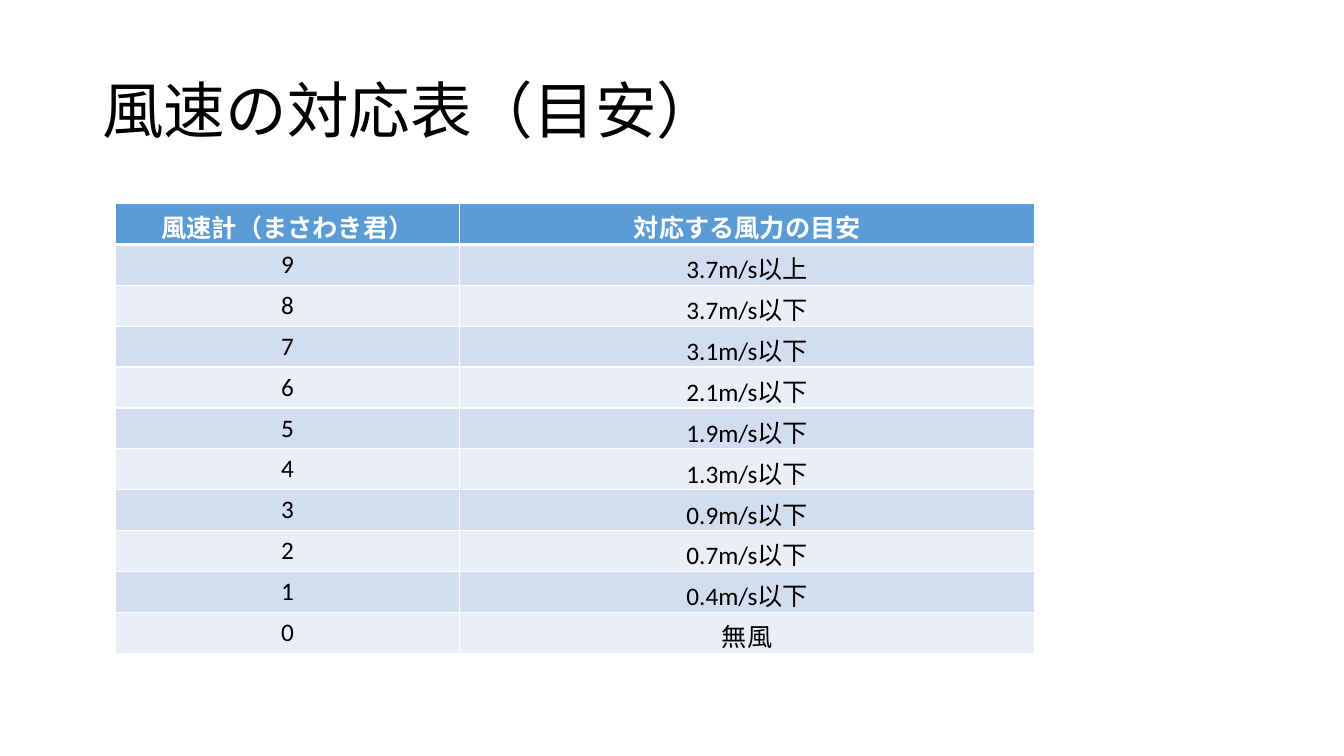
from lxml.etree import SubElement
from pptx import Presentation
from pptx.dml.color import RGBColor
from pptx.enum.text import MSO_ANCHOR, PP_ALIGN
from pptx.oxml.ns import qn
from pptx.util import Cm, Pt

HEADER = ("風速計（まさわき君）", "対応する風力の目安")
WIND_LEVELS = [
    ("9", "3.7m/s以上"),
    ("8", "3.7m/s以下"),
    ("7", "3.1m/s以下"),
    ("6", "2.1m/s以下"),
    ("5", "1.9m/s以下"),
    ("4", "1.3m/s以下"),
    ("3", "0.9m/s以下"),
    ("2", "0.7m/s以下"),
    ("1", "0.4m/s以下"),
    ("0", "無風"),
]
COLUMN_WIDTHS = (8.69, 14.48)
ROW_HEIGHT = 1.03
BAND_FILLS = ("EAEFF7", "D2DEEF")


def color(value):
    return RGBColor.from_string(value)


def format_run(p, size, font_color, bold=False):
    font = p.runs[0].font
    font.name = "Calibri"
    font.size = Pt(size)
    font.bold = bold
    font.color.rgb = color(font_color)


def add_title(s, text):
    tf = s.shapes.add_textbox(Cm(2.33), Cm(1.01), Cm(29.21), Cm(3.68)).text_frame
    tf.word_wrap = True
    tf.vertical_anchor = MSO_ANCHOR.MIDDLE
    p = tf.paragraphs[0]
    p.text = text
    p.line_spacing = 0.9
    format_run(p, 44, "000000")


def set_borders(cell, top, bottom):
    tc_pr = cell._tc.get_or_add_tcPr()
    for side, width in (("L", 1), ("R", 1), ("T", top), ("B", bottom)):
        ln = SubElement(tc_pr, qn(f"a:ln{side}"), w=str(Pt(width)))
        fill = SubElement(ln, qn("a:solidFill"))
        SubElement(fill, qn("a:srgbClr"), val="FFFFFF")


def fill_cell(cell, text, row):
    is_header = row == 0
    set_borders(cell, 3 if row == 1 else 1, 3 if is_header else 1)
    cell.fill.solid()
    cell.fill.fore_color.rgb = color("5B9BD5" if is_header else BAND_FILLS[row % 2])
    p = cell.text_frame.paragraphs[0]
    p.text = text
    p.alignment = PP_ALIGN.CENTER
    format_run(p, 18, "FFFFFF" if is_header else "000000", is_header)


def add_wind_table(s, rows):
    table = s.shapes.add_table(
        len(rows), len(COLUMN_WIDTHS), Cm(2.9), Cm(5.13),
        Cm(sum(COLUMN_WIDTHS)), Cm(ROW_HEIGHT * len(rows)),
    ).table
    for column, width in zip(table.columns, COLUMN_WIDTHS):
        column.width = Cm(width)
    for i, texts in enumerate(rows):
        table.rows[i].height = Cm(ROW_HEIGHT)
        for j, text in enumerate(texts):
            fill_cell(table.cell(i, j), text, i)


def main():
    prs = Presentation()
    prs.slide_width = Cm(33.87)
    prs.slide_height = Cm(19.05)
    s = prs.slides.add_slide(prs.slide_layouts[6])
    add_title(s, "風速の対応表（目安）")
    add_wind_table(s, [HEADER, *WIND_LEVELS])
    prs.save("out.pptx")


if __name__ == "__main__":
    main()
